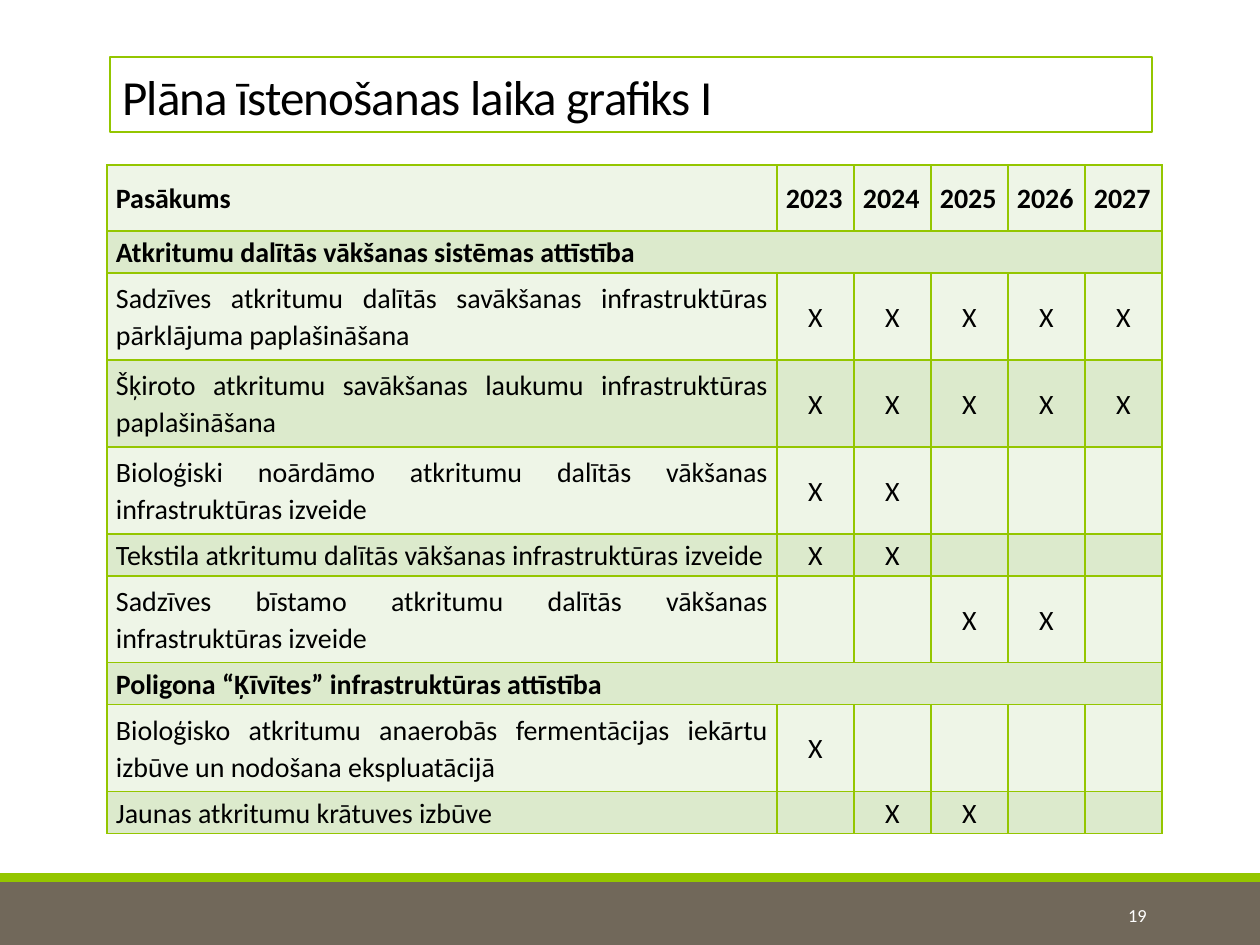
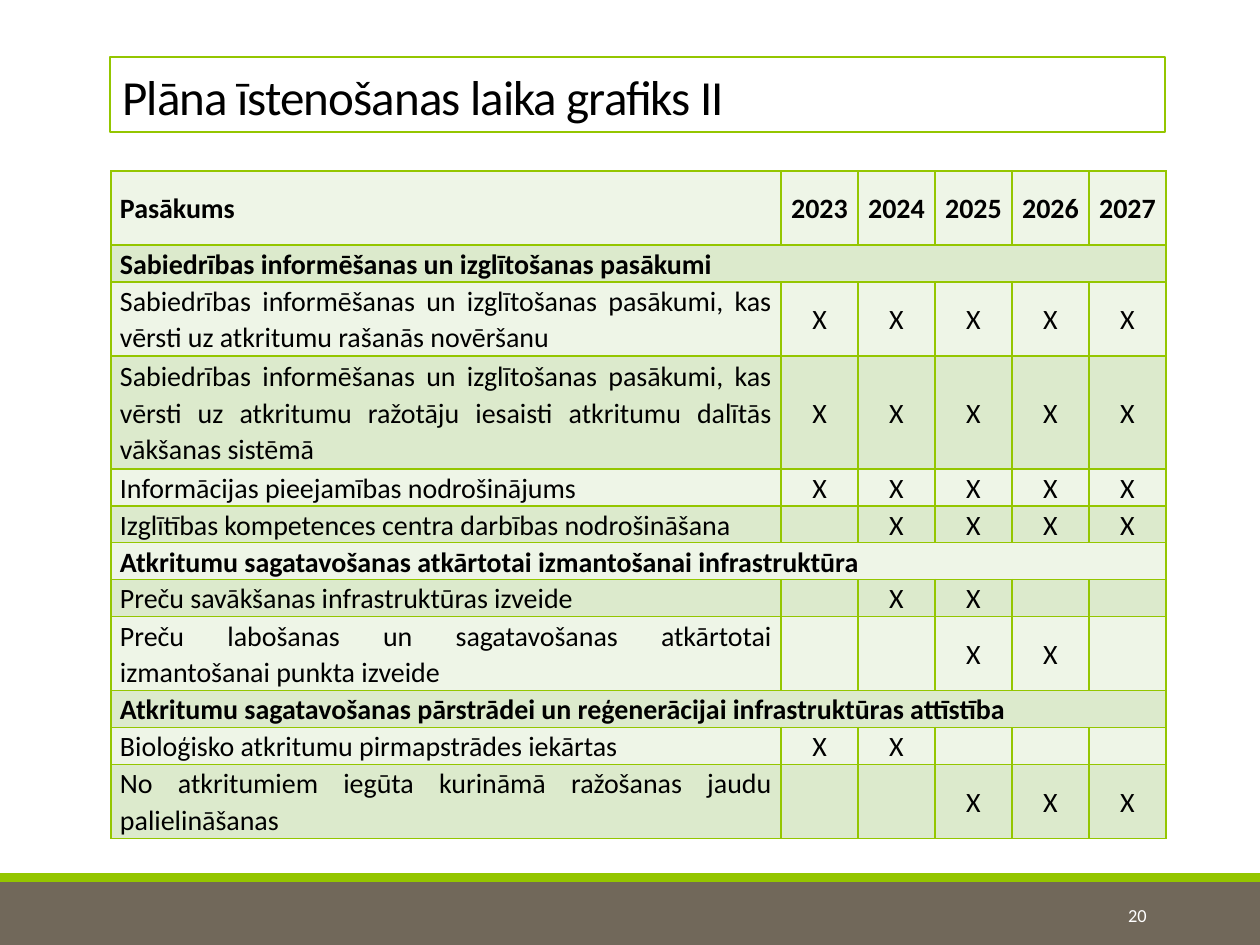
from lxml import etree
from pptx import Presentation
from pptx.dml.color import RGBColor
from pptx.enum.shapes import MSO_SHAPE
from pptx.enum.text import MSO_ANCHOR, PP_ALIGN
from pptx.oxml.ns import qn
from pptx.util import Pt

RECTANGLE = MSO_SHAPE.RECTANGLE
MIDDLE, BOTTOM = MSO_ANCHOR.MIDDLE, MSO_ANCHOR.BOTTOM
LEFT, CENTER, RIGHT, JUSTIFY = PP_ALIGN.LEFT, PP_ALIGN.CENTER, PP_ALIGN.RIGHT, PP_ALIGN.JUSTIFY

GREEN = RGBColor(0x94, 0xC6, 0x00)
BROWN = RGBColor(0x71, 0x68, 0x5A)
WHITE = RGBColor(0xFF, 0xFF, 0xFF)
BLACK = RGBColor(0x00, 0x00, 0x00)
ROW_FILLS = (RGBColor(0xEE, 0xF5, 0xE7), RGBColor(0xDC, 0xEA, 0xCC))

FONT = "Calibri"
TABLE_SIZE = Pt(16)
PX = 914400 / 126
PAGE_WIDTH, PAGE_HEIGHT = 1260, 945
YEARS = ("2023", "2024", "2025", "2026", "2027")
ACTIVITY_WIDTH, YEAR_WIDTH = 670, 77
CELL_MARGIN = 9

# Rows: text, number of lines, years marked (None for a section heading)
SCHEDULES = [
    {
        "title": "Plāna īstenošanas laika grafiks I",
        "title_width": 1042,
        "page": "19",
        "table_at": (107, 165),
        "header_height": 66,
        "line_heights": {1: 42, 2: 87},
        "year_align": JUSTIFY,
        "rows": [
            ("Atkritumu dalītās vākšanas sistēmas attīstība", 1, None),
            ("Sadzīves atkritumu dalītās savākšanas infrastruktūras pārklājuma paplašināšana",
             2, YEARS),
            ("Šķiroto atkritumu savākšanas laukumu infrastruktūras paplašināšana", 2, YEARS),
            ("Bioloģiski noārdāmo atkritumu dalītās vākšanas infrastruktūras izveide",
             2, YEARS[:2]),
            ("Tekstila atkritumu dalītās vākšanas infrastruktūras izveide", 1, YEARS[:2]),
            ("Sadzīves bīstamo atkritumu dalītās vākšanas infrastruktūras izveide",
             2, YEARS[2:4]),
            ("Poligona “Ķīvītes” infrastruktūras attīstība", 1, None),
            ("Bioloģisko atkritumu anaerobās fermentācijas iekārtu izbūve un nodošana "
             "ekspluatācijā", 2, YEARS[:1]),
            ("Jaunas atkritumu krātuves izbūve", 1, YEARS[1:3]),
        ],
    },
    {
        "title": "Plāna īstenošanas laika grafiks II",
        "title_width": 1055,
        "page": "20",
        "table_at": (111, 171),
        "header_height": 74,
        "line_heights": {1: 37, 2: 74, 3: 113},
        "year_align": CENTER,
        "rows": [
            ("Sabiedrības informēšanas un izglītošanas pasākumi", 1, None),
            ("Sabiedrības informēšanas un izglītošanas pasākumi, kas vērsti uz atkritumu "
             "rašanās novēršanu", 2, YEARS),
            ("Sabiedrības informēšanas un izglītošanas pasākumi, kas vērsti uz atkritumu "
             "ražotāju iesaisti atkritumu dalītās vākšanas sistēmā", 3, YEARS),
            ("Informācijas pieejamības nodrošinājums", 1, YEARS),
            ("Izglītības kompetences centra darbības nodrošināšana", 1, YEARS[1:]),
            ("Atkritumu sagatavošanas atkārtotai izmantošanai infrastruktūra", 1, None),
            ("Preču savākšanas infrastruktūras izveide", 1, YEARS[1:3]),
            ("Preču labošanas un sagatavošanas atkārtotai izmantošanai punkta izveide",
             2, YEARS[2:4]),
            ("Atkritumu sagatavošanas pārstrādei un reģenerācijai infrastruktūras attīstība",
             1, None),
            ("Bioloģisko atkritumu pirmapstrādes iekārtas", 1, YEARS[:2]),
            ("No atkritumiem iegūta kurināmā ražošanas jaudu palielināšanas", 2, YEARS[2:]),
        ],
    },
]


def px(*lengths):
    return [round(length * PX) for length in lengths]


def write(frame, text, size, color, align, bold=False):
    """Put one formatted paragraph in the frame and return it."""
    para = frame.paragraphs[0]
    para.text = text
    para.alignment = align
    for span in para.runs:
        span.font.name = FONT
        span.font.size = size
        span.font.bold = bold
        span.font.color.rgb = color
    return para


def add_rectangle(page, left, top, width, height, fill):
    box = page.shapes.add_shape(RECTANGLE, *px(left, top, width, height))
    box.shadow.inherit = False
    box.fill.solid()
    box.fill.fore_color.rgb = fill
    box.line.fill.background()
    return box


def add_frame(page, title, title_width, number):
    """Draw the bottom bands, the title box and the page number."""
    add_rectangle(page, 0, 882, PAGE_WIDTH, 63, BROWN)
    add_rectangle(page, 0, 873, PAGE_WIDTH, 9, GREEN)

    title_box = add_rectangle(page, 110, 57, title_width, 75, WHITE)
    title_box.line.color.rgb = GREEN
    title_box.line.width = Pt(1.25)
    title_box.text_frame.word_wrap = True
    title_box.text_frame.vertical_anchor = BOTTOM
    para = write(title_box.text_frame, title, Pt(28), BLACK, LEFT)
    para.line_spacing = 0.85
    para.runs[0].font._element.set("spc", "-50")

    number_box = page.shapes.add_textbox(*px(1023, 890, 136, 50))
    number_box.text_frame.word_wrap = True
    number_box.text_frame.vertical_anchor = MIDDLE
    write(number_box.text_frame, number, Pt(10.5), WHITE, RIGHT)


def add_borders(cell):
    properties = cell._tc.get_or_add_tcPr()
    for side in ("a:lnL", "a:lnR", "a:lnT", "a:lnB"):
        line = etree.SubElement(properties, qn(side), w=str(Pt(1)))
        fill = etree.SubElement(line, qn("a:solidFill"))
        etree.SubElement(fill, qn("a:srgbClr"), val=str(GREEN))


def fill_cell(cell, text, align, bold, fill):
    add_borders(cell)
    cell.fill.solid()
    cell.fill.fore_color.rgb = fill
    cell.vertical_anchor = MIDDLE
    cell.margin_left = cell.margin_right = px(CELL_MARGIN)[0]
    cell.margin_top = cell.margin_bottom = 0
    para = write(cell.text_frame, text, TABLE_SIZE, BLACK, align, bold)
    para.line_spacing = 1.07
    para.space_after = Pt(8)
    if not text:
        # An empty cell takes its line height from the paragraph end mark
        etree.SubElement(para._p, qn("a:endParaRPr"), sz=str(int(TABLE_SIZE.pt * 100)))


def add_schedule(page, schedule):
    rows = schedule["rows"]
    heights = [schedule["header_height"]]
    heights += [schedule["line_heights"][lines] for _, lines, _ in rows]
    widths = [ACTIVITY_WIDTH] + [YEAR_WIDTH] * len(YEARS)
    table = page.shapes.add_table(
        len(heights), len(widths),
        *px(*schedule["table_at"], sum(widths), sum(heights))).table
    table.first_row = table.horz_banding = False
    for column, width in zip(table.columns, px(*widths)):
        column.width = width
    for row, height in zip(table.rows, px(*heights)):
        row.height = height

    lines = [("Pasākums", YEARS, schedule["year_align"], True)]
    for activity, _, marked in rows:
        marks = ["X" if year in (marked or ()) else "" for year in YEARS]
        lines.append((activity, marks, CENTER, marked is None))

    for row_index, (activity, entries, align, bold) in enumerate(lines):
        fill = ROW_FILLS[row_index % 2]
        fill_cell(table.cell(row_index, 0), activity, JUSTIFY, bold, fill)
        for column_index, entry in enumerate(entries, 1):
            fill_cell(table.cell(row_index, column_index), entry, align, bold, fill)
        if row_index and bold:
            table.cell(row_index, 0).merge(table.cell(row_index, len(YEARS)))


def main():
    deck = Presentation()
    deck.slide_width, deck.slide_height = px(PAGE_WIDTH, PAGE_HEIGHT)
    blank = deck.slide_layouts[6]
    for schedule in SCHEDULES:
        page = deck.slides.add_slide(blank)
        add_frame(page, schedule["title"], schedule["title_width"], schedule["page"])
        add_schedule(page, schedule)
    deck.save("out.pptx")


if __name__ == "__main__":
    main()
